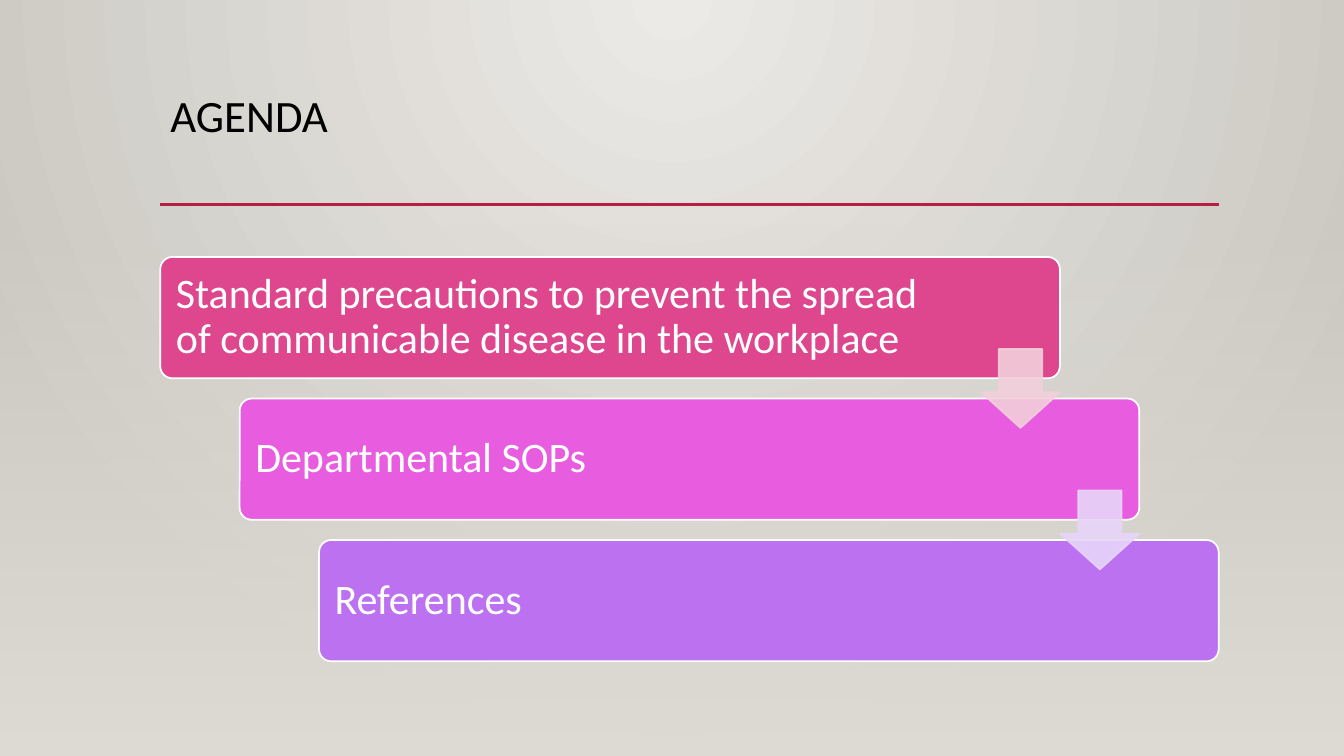
from lxml.etree import SubElement
from pptx import Presentation
from pptx.dml.color import RGBColor
from pptx.enum.shapes import MSO_CONNECTOR, MSO_SHAPE
from pptx.enum.text import MSO_ANCHOR, PP_ALIGN
from pptx.oxml.ns import qn
from pptx.util import Pt

COLORS = {
    "glow": "ECEAE7", "edge": "CAC7C1", "fade": "DFDBD5", "rule": "B71E42",
    "title": "000000", "white": "FFFFFF",
    "pink": "DE478E", "magenta": "E85CE0", "purple": "BC72F0",
    "pale pink": "F2CFDB", "pale purple": "E7D5F9",
}
FONT = "Calibri"
WIDTH, HEIGHT = 960, 540
AGENDA = [
    ("Standard precautions to prevent the spread of communicable disease in the workplace", "pink"),
    ("Departmental SOPs", "magenta"),
    ("References", "purple"),
]
ARROWS = ["pale pink", "pale purple"]


def rgb(name):
    return RGBColor.from_string(COLORS[name])


def set_alpha(color_element, percent):
    SubElement(color_element, qn("a:alpha"), val=str(percent * 1000))


def set_gradient(fill, start, end):
    fill.gradient()
    for stop, name in zip(fill.gradient_stops, (start, end)):
        stop.color.rgb = rgb(name)
    first, last = fill.gradient_stops
    first.position, last.position = 0, 1


def format_text(frame, size, color):
    para = frame.paragraphs[0]
    para.alignment = PP_ALIGN.LEFT
    para.line_spacing = 0.9
    for span in para.runs:
        span.font.name = FONT
        span.font.size = Pt(size)
        span.font.color.rgb = rgb(color)


def add_filled(page, kind, left, top, width, height, fill, line):
    shape = page.shapes.add_shape(kind, Pt(left), Pt(top), Pt(width), Pt(height))
    shape.shadow.inherit = False
    shape.fill.solid()
    shape.fill.fore_color.rgb = rgb(fill)
    shape.line.color.rgb = rgb(line)
    shape.line.width = Pt(1.25)
    return shape


def add_backdrop(page, fade_top):
    # Round glow from the top centre
    set_gradient(page.background.fill, "glow", "edge")
    gradient = page.element.find(".//" + qn("a:gradFill"))
    gradient.remove(gradient.find(qn("a:lin")))
    circle = SubElement(gradient, qn("a:path"), path="circle")
    SubElement(circle, qn("a:fillToRect"), l="43000", t="0", r="43000", b="100000")

    # Floor that fades in towards the bottom
    floor = page.shapes.add_shape(
        MSO_SHAPE.RECTANGLE, 0, Pt(fade_top), Pt(WIDTH), Pt(HEIGHT - fade_top))
    floor.shadow.inherit = False
    floor.line.fill.background()
    set_gradient(floor.fill, "fade", "fade")
    floor.fill.gradient_angle = 270
    set_alpha(floor.element.spPr.find(".//" + qn("a:srgbClr")), 0)


def add_heading(page, text, left, top, width, height):
    title = page.shapes.title
    title.left, title.top, title.width, title.height = map(Pt, (left, top, width, height))
    frame = title.text_frame
    frame.text = text
    frame.word_wrap = True
    frame.vertical_anchor = MSO_ANCHOR.TOP
    format_text(frame, 32, "title")

    # Rule along the lower edge of the heading
    bottom = Pt(top + height)
    rule = page.shapes.add_connector(
        MSO_CONNECTOR.STRAIGHT, Pt(left), bottom, Pt(left + width), bottom)
    rule.line.color.rgb = rgb("rule")
    rule.line.width = Pt(2.5)
    SubElement(rule.element.spPr, qn("a:effectLst"))


def add_staircase(page, left, top, width, height):
    card_width, card_height = width * 0.85, height * 0.3
    step_x, step_y = width * 0.075, height * 0.35

    # Cards, each one step right and down
    for index, (text, color) in enumerate(AGENDA):
        card = add_filled(
            page, MSO_SHAPE.ROUNDED_RECTANGLE, left + index * step_x,
            top + index * step_y, card_width, card_height, color, "white")
        card.adjustments[0] = 0.1
        frame = card.text_frame
        frame.text = text
        frame.word_wrap = True
        frame.vertical_anchor = MSO_ANCHOR.MIDDLE
        frame.margin_left = frame.margin_top = frame.margin_bottom = Pt(8.64)
        frame.margin_right = Pt(97)
        format_text(frame, 30, "white")

    # Arrows from each card to the next, flush with the card's right side
    size = card_height * 0.65
    for index, color in enumerate(ARROWS):
        arrow = add_filled(
            page, MSO_SHAPE.DOWN_ARROW, left + index * step_x + card_width - size,
            top + (index + 0.65) * step_y, size, size, color, color)
        arrow.adjustments[0] = 0.55
        arrow.adjustments[1] = 0.45
        for element in arrow.element.spPr.iter(qn("a:srgbClr")):
            set_alpha(element, 90)


def build_agenda(deck):
    page = deck.slides.add_slide(deck.slide_layouts[5])
    add_backdrop(page, 159)
    add_heading(page, "AGENDA", 114.5, 63.2, 756, 82.8)
    add_staircase(page, 114.5, 183.6, 756, 288.8)


def main():
    deck = Presentation()
    deck.slide_width, deck.slide_height = Pt(WIDTH), Pt(HEIGHT)
    build_agenda(deck)
    deck.save("out.pptx")


if __name__ == "__main__":
    main()
